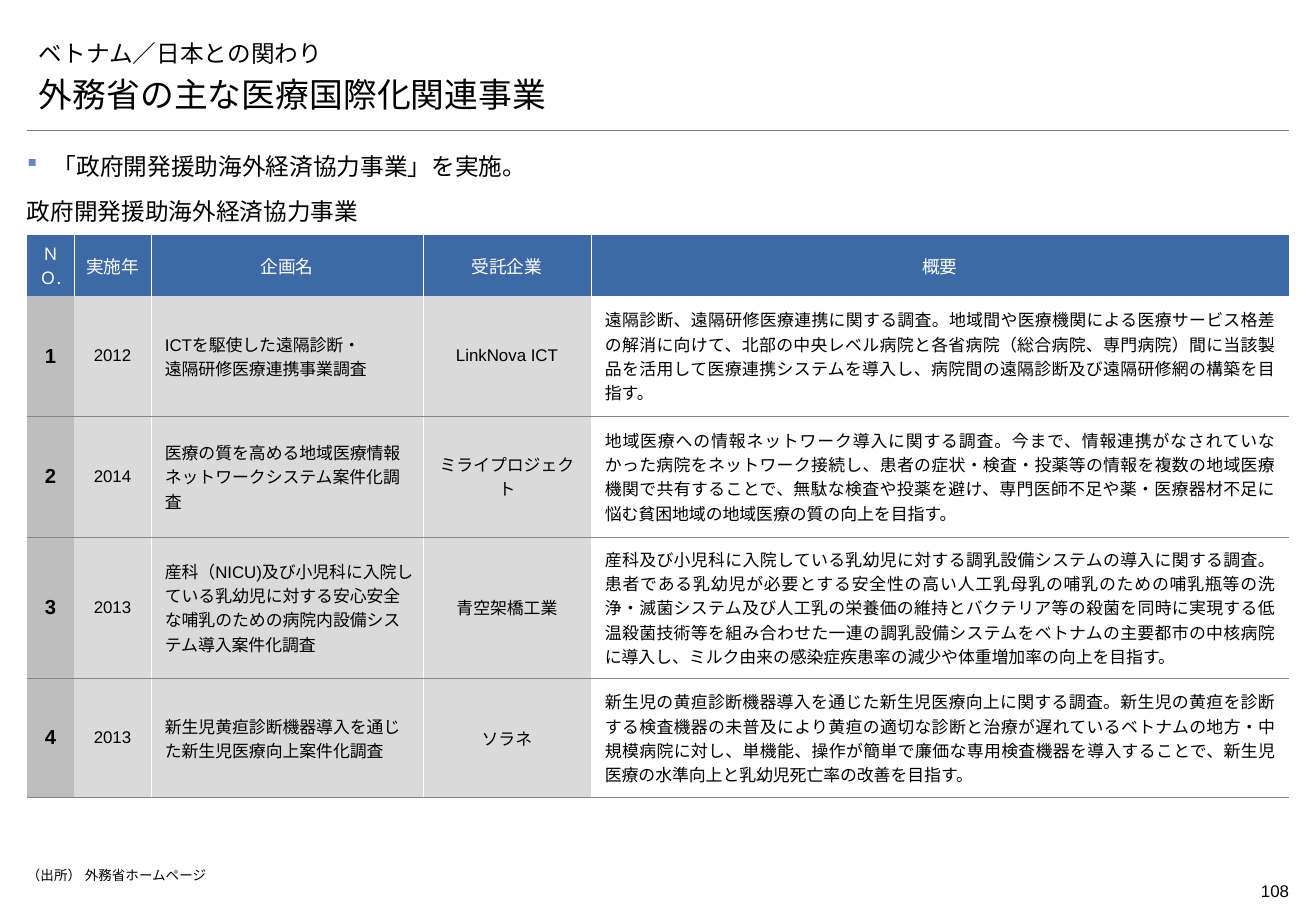
from lxml.etree import SubElement
from pptx import Presentation
from pptx.dml.color import RGBColor
from pptx.enum.shapes import MSO_CONNECTOR
from pptx.enum.text import MSO_ANCHOR, PP_ALIGN
from pptx.oxml.ns import qn
from pptx.util import Pt

PX = 7526  # EMU per px
COLORS = {"black": "000000", "white": "FFFFFF", "header": "3D6AA7", "number": "BEBEBE",
          "label": "DADADA", "border": "868686", "rule": "7F7F7F", "bullet": "5F8AC3"}
JAPANESE = "Noto Sans CJK JP"


def write_text(holder, text, size, font="Arial", asian_font=None, color="black", bold=False,
               align=PP_ALIGN.LEFT, anchor=MSO_ANCHOR.TOP, insets=(0, 0, 0, 0)):
    """Fill a text frame or a table cell, both of which carry margins and an anchor."""
    holder.vertical_anchor = anchor
    for side, inset in zip(("left", "top", "right", "bottom"), insets):
        setattr(holder, f"margin_{side}", inset * PX)
    frame = getattr(holder, "text_frame", holder)
    paragraph = frame.paragraphs[0]
    paragraph.text = text
    paragraph.alignment = align
    for run in paragraph.runs:
        for name, value in {"size": Pt(size), "name": font, "bold": bold}.items():
            setattr(run.font, name, value)
        run.font.color.rgb = RGBColor.from_string(COLORS[color])
        run.font._element.set("lang", "ja-JP")
        SubElement(run.font._element, qn("a:ea"), typeface=asian_font or font)
    return paragraph


def set_border(cell, edge, color):
    line = SubElement(cell._tc.get_or_add_tcPr(), qn(f"a:{edge}"), w=str(Pt(0.5)))
    if color:
        fill = SubElement(line, qn("a:solidFill"))
        SubElement(fill, qn("a:srgbClr"), val=COLORS[color])
    else:
        SubElement(line, qn("a:noFill"))


presentation = Presentation()
presentation.slide_width = 1316 * PX
presentation.slide_height = 911 * PX
slide = presentation.slides.add_slide(presentation.slide_layouts[6])

# Rule under the title
rule = slide.shapes.add_connector(MSO_CONNECTOR.STRAIGHT, 27 * PX, 130 * PX, 1289 * PX, 130 * PX)
rule.line.color.rgb = RGBColor.from_string(COLORS["rule"])
rule.line.width = Pt(0.25)
SubElement(rule._element.spPr, qn("a:effectLst"))

# Titles, lead sentence, table caption, source and page number
BOTTOM = MSO_ANCHOR.BOTTOM
text_boxes = [
    ((27, 26, 1262, 47), "ベトナム／日本との関わり",
     {"size": 14, "font": JAPANESE, "anchor": BOTTOM, "insets": (12, 6, 12, 6)}),
    ((27, 73, 1262, 47), "外務省の主な医療国際化関連事業",
     {"size": 20, "font": "Montserrat", "anchor": BOTTOM, "insets": (12, 6, 12, 6)}),
    ((27, 149, 1262, 32), "「政府開発援助海外経済協力事業」を実施。",
     {"size": 14, "align": PP_ALIGN.JUSTIFY}),
    ((27, 188, 1262, 47), "政府開発援助海外経済協力事業",
     {"size": 14, "font": "Montserrat", "anchor": BOTTOM, "insets": (0, 6, 0, 10)}),
    ((27, 867, 1148, 19), "（出所） 外務省ホームページ", {"size": 8}),
    ((1194, 875, 95, 33), "108",
     {"size": 10, "align": PP_ALIGN.RIGHT, "insets": (0, 6, 0, 6)}),
]
paragraphs = []
for box, text, text_format in text_boxes:
    shape = slide.shapes.add_textbox(*(length * PX for length in box))
    shape.text_frame.word_wrap = True
    paragraphs.append(write_text(shape.text_frame, text, **text_format))

# Square bullet on the lead sentence
lead = paragraphs[2]
lead.line_spacing = 1.1
lead.space_after = Pt(2)
properties = lead._p.get_or_add_pPr()
properties.set("marL", str(26 * PX))
properties.set("indent", str(-26 * PX))
bullet_color = SubElement(properties, qn("a:buClr"))
SubElement(bullet_color, qn("a:srgbClr"), val=COLORS["bullet"])
SubElement(properties, qn("a:buFont"), typeface="Wingdings", charset="2")
SubElement(properties, qn("a:buChar"), char="§")

# Project table
header = ["ＮＯ.", "実施年", "企画名", "受託企業", "概要"]
projects = [
    ["1", "2012", "ICTを駆使した遠隔診断・\v遠隔研修医療連携事業調査", "LinkNova ICT",
     "遠隔診断、遠隔研修医療連携に関する調査。地域間や医療機関による医療サービス格差の解消に向けて、"
     "北部の中央レベル病院と各省病院（総合病院、専門病院）間に当該製品を活用して医療連携システムを導入し、"
     "病院間の遠隔診断及び遠隔研修網の構築を目指す。"],
    ["2", "2014", "医療の質を高める地域医療情報ネットワークシステム案件化調査", "ミライプロジェクト",
     "地域医療への情報ネットワーク導入に関する調査。今まで、情報連携がなされていなかった病院をネットワーク接続し、"
     "患者の症状・検査・投薬等の情報を複数の地域医療機関で共有することで、無駄な検査や投薬を避け、"
     "専門医師不足や薬・医療器材不足に悩む貧困地域の地域医療の質の向上を目指す。"],
    ["3", "2013", "産科（NICU)及び小児科に入院している乳幼児に対する安心安全な哺乳のための"
     "病院内設備システム導入案件化調査", "青空架橋工業",
     "産科及び小児科に入院している乳幼児に対する調乳設備システムの導入に関する調査。"
     "患者である乳幼児が必要とする安全性の高い人工乳母乳の哺乳のための哺乳瓶等の洗浄・滅菌システム及び"
     "人工乳の栄養価の維持とバクテリア等の殺菌を同時に実現する低温殺菌技術等を組み合わせた"
     "一連の調乳設備システムをベトナムの主要都市の中核病院に導入し、"
     "ミルク由来の感染症疾患率の減少や体重増加率の向上を目指す。"],
    ["4", "2013", "新生児黄疸診断機器導入を通じた新生児医療向上案件化調査", "ソラネ",
     "新生児の黄疸診断機器導入を通じた新生児医療向上に関する調査。"
     "新生児の黄疸を診断する検査機器の未普及により黄疸の適切な診断と治療が遅れているベトナムの地方・中規模病院に対し、"
     "単機能、操作が簡単で廉価な専用検査機器を導入することで、新生児医療の水準向上と乳幼児死亡率の改善を目指す。"],
]
column_widths = [47, 77, 272, 168, 698]
row_heights = [61, 120, 121, 141, 120]
table = slide.shapes.add_table(5, 5, 27 * PX, 235 * PX, sum(column_widths) * PX,
                               sum(row_heights) * PX).table
for column, width in zip(table.columns, column_widths):
    column.width = width * PX
for row, height in zip(table.rows, row_heights):
    row.height = height * PX

# Fill, alignment and insets of each body column
CENTER = PP_ALIGN.CENTER
body_columns = [
    ("number", CENTER, (5, 4, 5, 4)),
    ("label", CENTER, (5, 4, 5, 4)),
    ("label", PP_ALIGN.LEFT, (14, 10, 14, 10)),
    ("label", CENTER, (10, 4, 10, 4)),
    ("white", PP_ALIGN.JUSTIFY, (14, 10, 14, 10)),
]
for row_index, texts in enumerate([header, *projects]):
    is_header = row_index == 0
    for column_index, text in enumerate(texts):
        cell = table.cell(row_index, column_index)
        fill, align, insets = body_columns[column_index]
        text_format = {"size": 10, "asian_font": JAPANESE, "align": align, "insets": insets}
        if is_header:
            fill = "header"
            text_format = {"size": 10 if column_index == 0 else 10.5, "color": "white",
                           "font": JAPANESE, "align": CENTER, "insets": (5, 6, 5, 6)}
        elif column_index == 0:
            text_format.update(size=12, bold=True)
        elif column_index == 2 and row_index > 2:
            text_format["insets"] = (14, 10, 10, 10)
        write_text(cell, text, anchor=MSO_ANCHOR.MIDDLE, **text_format)
        inner_left = column_index > (0 if is_header else 1)
        inner_right = column_index < 4 and (is_header or column_index > 0)
        edges = {
            "lnL": "white" if inner_left else None,
            "lnR": "white" if inner_right else None,
            "lnT": "border" if row_index > 1 else None,
            "lnB": None if is_header else "border",
        }
        for edge, color in edges.items():
            set_border(cell, edge, color)
        cell.fill.solid()
        cell.fill.fore_color.rgb = RGBColor.from_string(COLORS[fill])

presentation.save("out.pptx")
